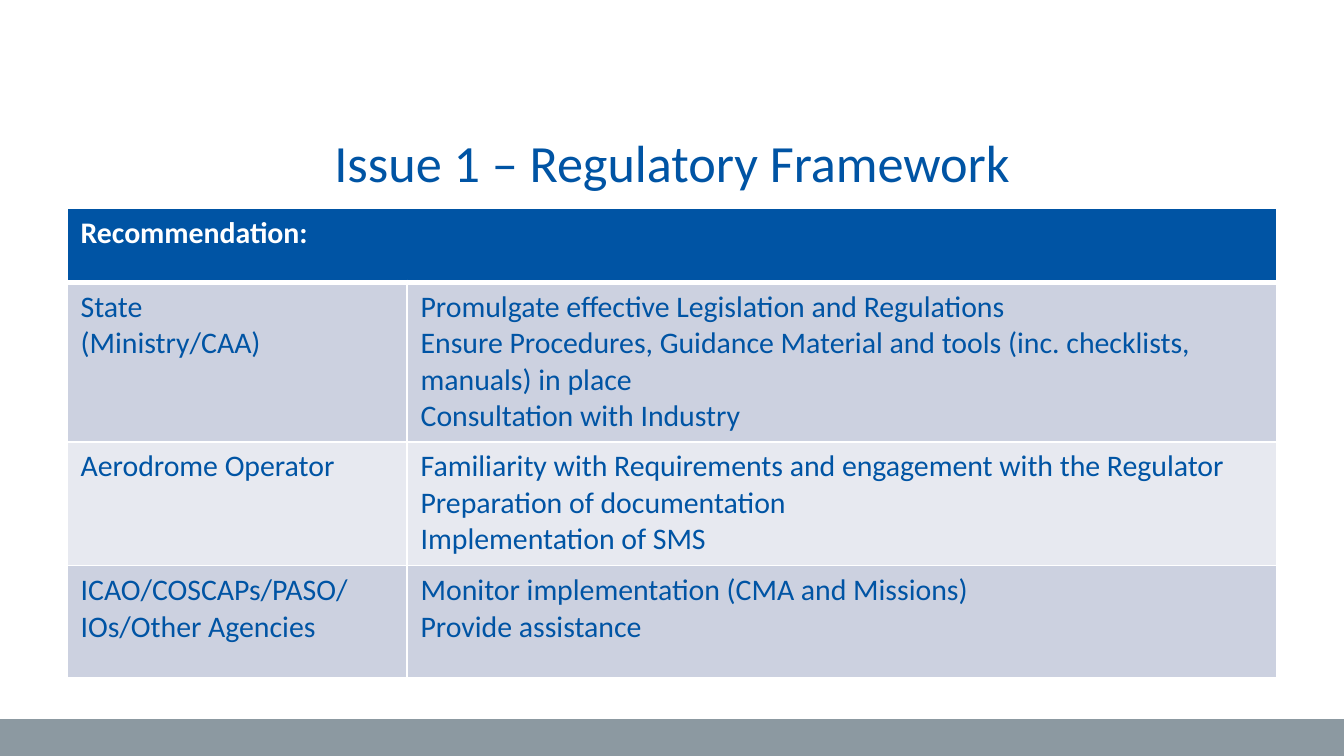
import dataclasses

import lxml.etree
import pptx
import pptx.dml.color
import pptx.enum.shapes
import pptx.enum.text
import pptx.oxml.ns
import pptx.util

Inches = pptx.util.Inches


@dataclasses.dataclass(frozen=True)
class Theme:
    font: str = "Calibri"
    blue: str = "0054A4"
    white: str = "FFFFFF"
    gray: str = "8C99A1"
    bands: tuple = ("CCD1E0", "E7E9F0")
    title_size: int = 28
    table_size: int = 16


theme = Theme()


def add_text(paragraph, text, size, color, bold=False):
    run = paragraph.add_run()
    run.text = text
    run.font.name = theme.font
    run.font.size = pptx.util.Pt(size)
    run.font.bold = bold
    run.font.color.rgb = pptx.dml.color.RGBColor.from_string(color)


def format_cell(cell, fill, bottom_width):
    properties = cell._tc.get_or_add_tcPr()
    widths = {"lnL": 1, "lnR": 1, "lnT": 1, "lnB": bottom_width}
    for side, width in widths.items():
        line = lxml.etree.SubElement(
            properties, pptx.oxml.ns.qn(f"a:{side}"), w=str(pptx.util.Pt(width))
        )
        solid = lxml.etree.SubElement(line, pptx.oxml.ns.qn("a:solidFill"))
        lxml.etree.SubElement(solid, pptx.oxml.ns.qn("a:srgbClr"), val=theme.white)
    cell.fill.solid()
    cell.fill.fore_color.rgb = pptx.dml.color.RGBColor.from_string(fill)


presentation = pptx.Presentation()
presentation.slide_width = Inches(10)
presentation.slide_height = Inches(10 * 9 / 16)
slide = presentation.slides.add_slide(presentation.slide_layouts[5])

footer_top = Inches(5.35)
footer_bar = slide.shapes.add_shape(
    pptx.enum.shapes.MSO_SHAPE.RECTANGLE,
    Inches(0), footer_top, Inches(10), presentation.slide_height - footer_top,
)
footer_bar.shadow.inherit = False
footer_bar.fill.solid()
footer_bar.fill.fore_color.rgb = pptx.dml.color.RGBColor.from_string(theme.gray)
footer_bar.line.fill.background()

title = slide.shapes.title
title.left, title.top = Inches(0.5), Inches(0.92)
title.width, title.height = Inches(9), Inches(0.47)
title.text_frame.auto_size = pptx.enum.text.MSO_AUTO_SIZE.NONE
title.text_frame.vertical_anchor = pptx.enum.text.MSO_ANCHOR.TOP
title.text_frame.margin_top = Inches(0.05)
title_paragraph = title.text_frame.paragraphs[0]
title_paragraph.alignment = pptx.enum.text.PP_ALIGN.CENTER
add_text(title_paragraph, "Issue 1 – Regulatory Framework", theme.title_size, theme.blue)

recommendations = [
    (["Recommendation:"], []),
    (
        ["State", "(Ministry/CAA)"],
        [
            "Promulgate effective Legislation and Regulations",
            "Ensure Procedures, Guidance Material and tools (inc. checklists, manuals) in place",
            "Consultation with Industry",
        ],
    ),
    (
        ["Aerodrome Operator"],
        [
            "Familiarity with Requirements and engagement with the Regulator",
            "Preparation of documentation",
            "Implementation of SMS",
        ],
    ),
    (
        ["ICAO/COSCAPs/PASO/", "IOs/Other Agencies"],
        ["Monitor implementation (CMA and Missions)", "Provide assistance"],
    ),
]
column_widths = [2.53, 6.47]
row_heights = [0.55, 1.18, 0.92, 0.84]

table = slide.shapes.add_table(
    len(row_heights), len(column_widths),
    Inches(0.5), Inches(1.55), Inches(sum(column_widths)), Inches(sum(row_heights)),
).table
for column, width in zip(table.columns, column_widths):
    column.width = Inches(width)
for row, height in zip(table.rows, row_heights):
    row.height = Inches(height)
table.cell(0, 0).merge(table.cell(0, 1))

for row_index, row_texts in enumerate(recommendations):
    is_header = row_index == 0
    fill = theme.blue if is_header else theme.bands[(row_index - 1) % 2]
    color = theme.white if is_header else theme.blue
    for column_index, lines in enumerate(row_texts):
        cell = table.cell(row_index, column_index)
        format_cell(cell, fill, 3 if is_header else 1)
        for line_index, text in enumerate(lines):
            text_frame = cell.text_frame
            paragraph = text_frame.add_paragraph() if line_index else text_frame.paragraphs[0]
            add_text(paragraph, text, theme.table_size, color, is_header)

presentation.save("out.pptx")
